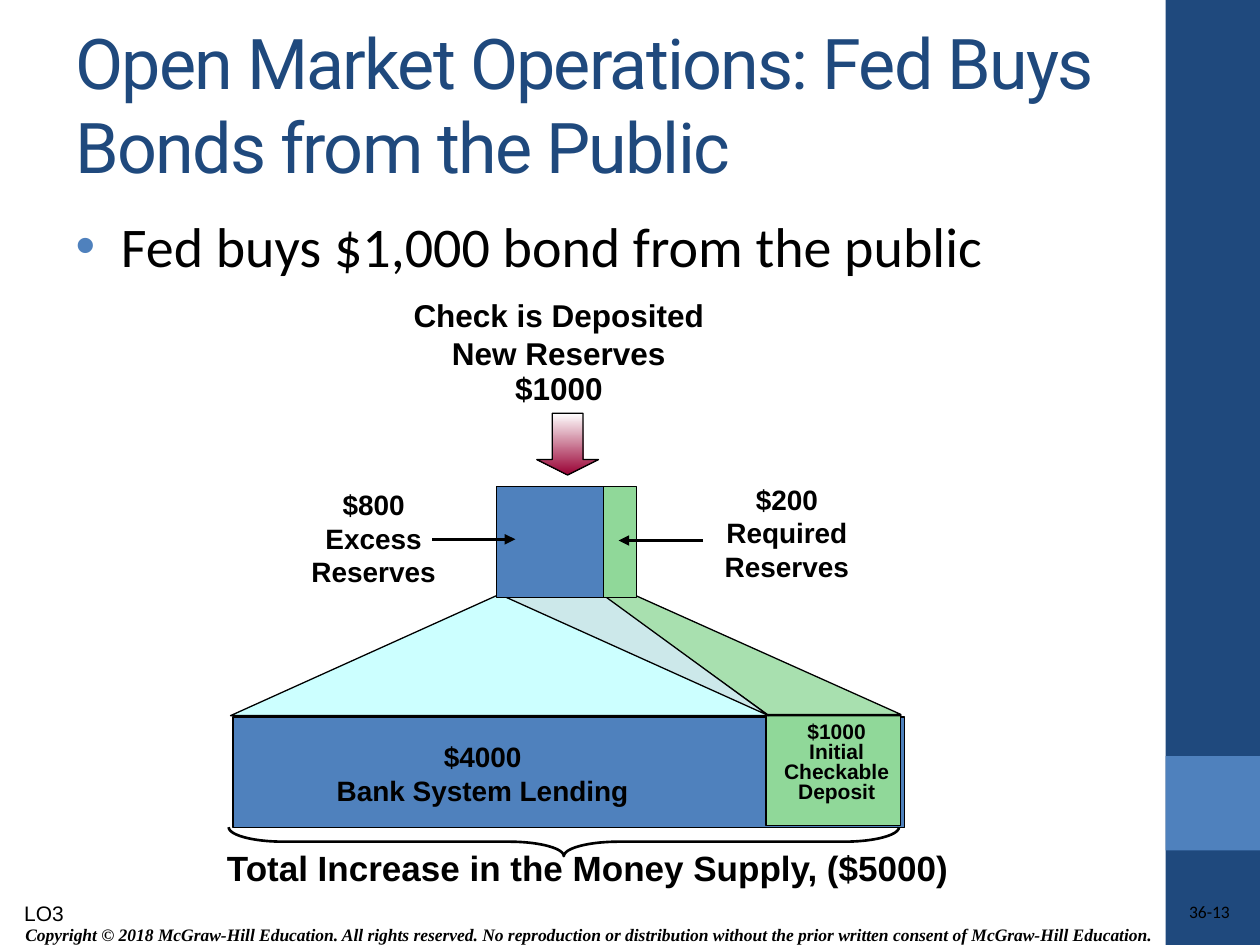
"""Build the slide on open market operations with bonds bought from the public."""
from dataclasses import dataclass
from typing import Optional

from lxml import etree
from pptx import Presentation
from pptx import util as u
from pptx.dml.color import RGBColor
from pptx.enum import shapes, text
from pptx.oxml import ns

NAVY = RGBColor(0x1F, 0x49, 0x7D)
BLUE = RGBColor(0x4F, 0x81, 0xBD)
GREEN = RGBColor(0x90, 0xD8, 0x99)
PALE_GREEN = RGBColor(0xA8, 0xE0, 0xAF)
CYAN = RGBColor(0xCC, 0xFF, 0xFF)
PALE_TEAL = RGBColor(0xCC, 0xE8, 0xEA)
CRIMSON = RGBColor(0x99, 0x00, 0x33)
WHITE = RGBColor(0xFF, 0xFF, 0xFF)
BLACK = RGBColor(0, 0, 0)
KIND = shapes.MSO_SHAPE
ALIGN = text.PP_ALIGN

Box = tuple[float, float, float, float]
Point = tuple[float, float]


@dataclass
class Label:
    box: Box
    lines: tuple[str, ...]
    size: float
    font: str = "Arial"
    bold: bool = True
    italic: bool = False
    wrap: bool = False
    align: ALIGN = ALIGN.CENTER
    spacing: Optional[float] = None
    anchor: text.MSO_ANCHOR = text.MSO_ANCHOR.TOP
    inset: Optional[float] = None


@dataclass
class Block:
    box: Box
    fill: Optional[RGBColor]
    kind: KIND = KIND.RECTANGLE
    outline: Optional[float] = 0.75
    adjustments: tuple[float, ...] = ()
    rotation: float = 0


@dataclass
class Fan:
    points: tuple[Point, ...]
    fill: RGBColor


def inches(values: tuple[float, ...]) -> list[u.Length]:
    return [u.Inches(value) for value in values]


def style_run(run, size: float, font: str, color: RGBColor) -> None:
    run.font.size = u.Pt(size)
    run.font.name = font
    run.font.color.rgb = color


def finish(shape, fill: Optional[RGBColor], outline: Optional[float]) -> None:
    shape.shadow.inherit = False
    if fill is None:
        shape.fill.background()
    else:
        shape.fill.solid()
        shape.fill.fore_color.rgb = fill
    if outline is None:
        shape.line.fill.background()
    else:
        shape.line.color.rgb = BLACK
        shape.line.width = u.Pt(outline)


def draw_label(slide, label: Label) -> None:
    frame = slide.shapes.add_textbox(*inches(label.box)).text_frame
    frame.word_wrap = label.wrap
    frame.vertical_anchor = label.anchor
    if label.inset is not None:
        frame.margin_left = frame.margin_right = u.Inches(label.inset)
        frame.margin_top = frame.margin_bottom = u.Inches(label.inset)
    for index, line in enumerate(label.lines):
        paragraph = frame.add_paragraph() if index else frame.paragraphs[0]
        paragraph.alignment = label.align
        if label.spacing:
            paragraph.line_spacing = label.spacing
        run = paragraph.add_run()
        run.text = line
        style_run(run, label.size, label.font, BLACK)
        run.font.bold = label.bold
        run.font.italic = label.italic


def draw_block(slide, block: Block):
    shape = slide.shapes.add_shape(block.kind, *inches(block.box))
    for index, value in enumerate(block.adjustments):
        shape.adjustments[index] = value
    shape.rotation = block.rotation
    finish(shape, block.fill, block.outline)
    return shape


def draw_fan(slide, fan: Fan) -> None:
    start, *rest = [inches(point) for point in fan.points]
    builder = slide.shapes.build_freeform(*start)
    builder.add_line_segments(rest, close=True)
    finish(builder.convert_to_shape(), fan.fill, 0.75)


def draw_arrow(slide, start: Point, end: Point) -> None:
    arrow = slide.shapes.add_connector(
        shapes.MSO_CONNECTOR.STRAIGHT, *inches(start + end))
    arrow.line.color.rgb = BLACK
    arrow.line.width = u.Pt(2)
    etree.SubElement(arrow.line._get_or_add_ln(), ns.qn("a:tailEnd"), type="triangle")
    etree.SubElement(arrow._element.spPr, ns.qn("a:effectLst"))


def place(placeholder, box: Box):
    placeholder.left, placeholder.top, placeholder.width, placeholder.height = inches(box)
    placeholder.text_frame.auto_size = text.MSO_AUTO_SIZE.NONE
    return placeholder.text_frame


def write_headings(slide) -> None:
    title = place(slide.shapes.title, (0.5, 0.3, 8.33, 1.05))
    title.vertical_anchor = text.MSO_ANCHOR.MIDDLE
    title.paragraphs[0].alignment = ALIGN.LEFT
    heading = title.paragraphs[0].add_run()
    heading.text = "Open Market Operations: Fed Buys Bonds from the Public"
    style_run(heading, 40, "Roboto", NAVY)
    heading._r.get_or_add_rPr().set("spc", "-100")

    body = place(slide.placeholders[1], (0.5, 1.63, 8.33, 0.64))
    paragraph = body.paragraphs[0]
    properties = paragraph._p.get_or_add_pPr()
    properties.set("marL", str(u.Inches(0.36)))
    properties.set("indent", str(u.Inches(-0.36)))
    bullet_color = etree.SubElement(properties, ns.qn("a:buClr"))
    etree.SubElement(bullet_color, ns.qn("a:srgbClr"), val=str(BLUE))
    etree.SubElement(properties, ns.qn("a:buFont"), typeface="Arial")
    etree.SubElement(properties, ns.qn("a:buChar"), char="•")
    paragraph.space_before = u.Pt(0)
    point = paragraph.add_run()
    point.text = "Fed buys $1,000 bond from the public"
    style_run(point, 32, "Calibri", BLACK)


SIDEBAR = (
    Block((9.25, 0, 0.75, 7.5), NAVY, outline=None),
    Block((9.25, 6, 0.75, 0.75), BLUE, outline=None),
)
DEPOSIT_ARROW = Block((4.26, 3.28, 0.49, 0.49), WHITE, KIND.DOWN_ARROW,
                      adjustments=(0.5, 0.25))
MONEY_SUPPLY = (
    Block((1.85, 5.69, 5.33, 0.88), BLUE),
    Block((6.08, 5.67, 1.07, 0.88), GREEN),
    Block((1.83, 4.48, 5.32, 1.2), CYAN, KIND.ISOSCELES_TRIANGLE),
)
FANS = (
    Fan(((4.77, 4.72), (6.09, 5.67), (7.15, 5.67), (5.03, 4.72)), PALE_GREEN),
    Fan(((3.97, 4.72), (6.1, 5.68), (4.77, 4.71)), PALE_TEAL),
)
RESERVES = (
    Block((4.36, 4.02, 0.23, 5.32), None, KIND.LEFT_BRACE, 1.5, (1.9, 0.5), 270),
    Block((3.94, 3.86, 1.06, 0.88), BLUE),
    Block((4.79, 3.86, 0.26, 0.88), GREEN),
)
LABELS = (
    Label((0.06, 7.28, 9.22, 0.28), (
        "Copyright © 2018 McGraw-Hill Education. All rights reserved. No reproduction "
        "or distribution without the prior written consent of McGraw-Hill Education.",),
        10, "Times New Roman", italic=True, anchor=text.MSO_ANCHOR.MIDDLE),
    Label((7.81, 7.15, 1.95, 0.2), ("36-13",), 10, "Calibri", bold=False, wrap=True,
          align=ALIGN.RIGHT, spacing=1.02, inset=0),
    Label((3.18, 2.3, 2.51, 0.7), ("Check is Deposited", "New Reserves"), 18),
    Label((3.99, 2.88, 0.9, 0.4), ("$1000",), 18, align=ALIGN.LEFT),
    Label((1.69, 6.67, 5.95, 0.43), ("Total Increase in the Money Supply, ($5000)",), 20),
    Label((5.65, 3.78, 1.19, 0.9), ("$200", "Required", "Reserves"), 16),
    Label((2.37, 3.82, 1.19, 0.9), ("$800", "Excess", "Reserves"), 16),
    Label((6.1, 5.69, 1.08, 0.74), ("$1000", "Initial", "Checkable", "Deposit"), 12,
          wrap=True, spacing=0.8),
    Label((2.57, 5.82, 2.52, 0.64), ("$4000", "Bank System Lending"), 16),
    Label((0, 7.1, 0.7, 0.3), ("LO3",), 12, bold=False, wrap=True),
)


def main() -> None:
    deck = Presentation()
    deck.slide_width, deck.slide_height = inches((10, 7.5))
    slide = deck.slides.add_slide(deck.slide_layouts[1])
    write_headings(slide)
    for block in SIDEBAR + MONEY_SUPPLY:
        draw_block(slide, block)
    for fan in FANS:
        draw_fan(slide, fan)
    for block in RESERVES:
        draw_block(slide, block)
    gradient = draw_block(slide, DEPOSIT_ARROW).fill
    gradient.gradient()
    gradient.gradient_angle = 270
    for stop, position, color in zip(gradient.gradient_stops, (0, 1), (WHITE, CRIMSON)):
        stop.position = position
        stop.color.rgb = color
    for label in LABELS:
        draw_label(slide, label)
    draw_arrow(slide, (3.43, 4.28), (4.09, 4.28))
    draw_arrow(slide, (5.58, 4.29), (4.91, 4.29))
    deck.save("out.pptx")


if __name__ == "__main__":
    main()
